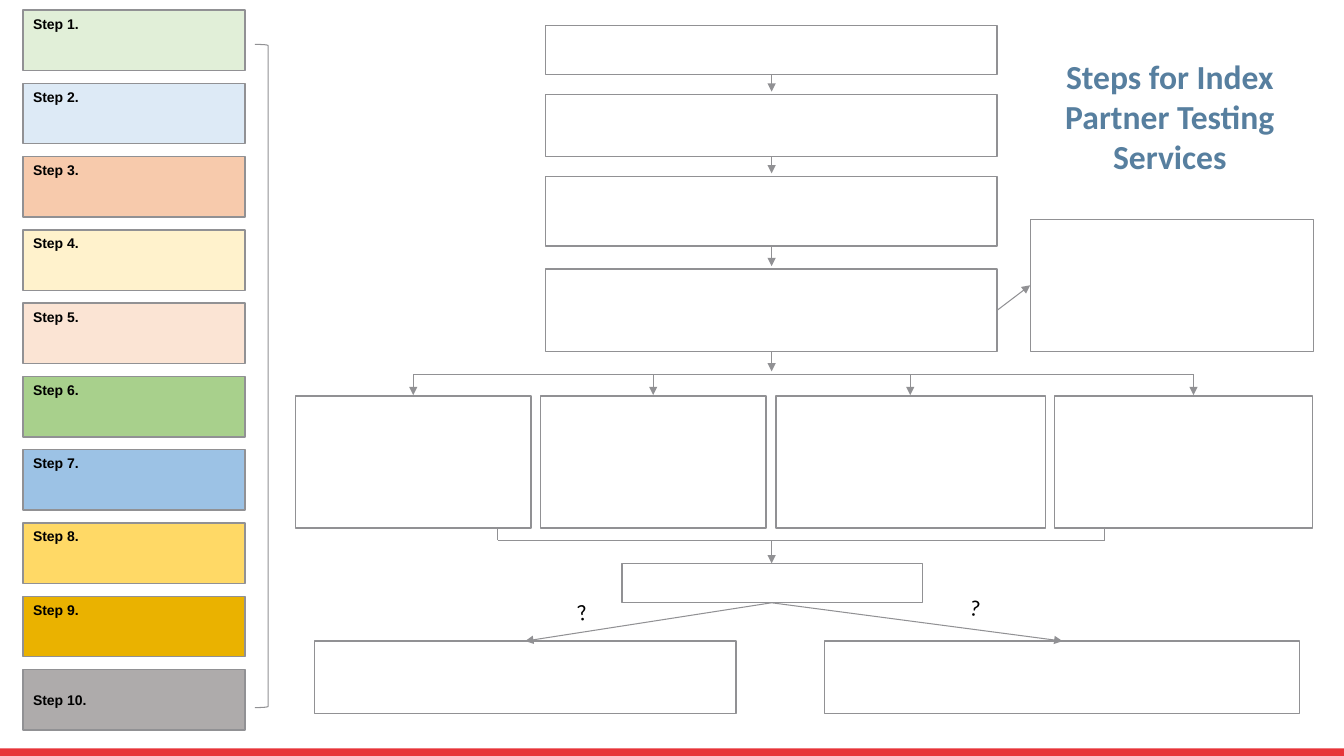
from lxml.etree import SubElement
from pptx import Presentation
from pptx.dml.color import RGBColor
from pptx.enum.shapes import MSO_CONNECTOR as Connector, MSO_SHAPE as Shape
from pptx.enum.text import MSO_ANCHOR as Anchor, PP_ALIGN as Align
from pptx.oxml.ns import qn
from pptx.util import Inches, Pt

CELL = Inches(0.1)
COLUMNS, ROWS = 133.33, 75

COLORS = {
    "outline": "919194",
    "text": "000000",
    "title": "577F9F",
    "paper": "FFFFFF",
    "footer": "E73439",
}
STEP_COLORS = [
    "E1EFD8", "DDEAF6", "F7CAAC", "FFF2CC", "FBE4D4",
    "A8D08C", "9CC2E5", "FFD966", "EAB200", "AEABAB",
]
STEP_FORMAT = {"name": "Arial", "size": Pt(10), "bold": True}
TITLE_FORMAT = {"name": "Calibri", "size": Pt(24), "bold": True}
MARK_FORMAT = {"name": "Calibri", "size": Pt(16)}

STEP_LEFT, STEP_TOP, STEP_WIDTH, STEP_HEIGHT, STEP_PITCH = 2.3, 1, 22, 6, 7.27
MAIN_LEFT, MAIN_WIDTH, MAIN_CENTER = 54.1, 44.8, 76.55
MAIN_ROWS = [(2.5, 4.9), (9.4, 6.1), (17.5, 6.9), (26.7, 8.2)]
BRANCHES = [(29.3, 23.4, 41), (53.6, 22.4, 64.8), (77, 26.7, 90.3), (104.6, 25.6, 118.4)]
BRANCH_TOP, BRANCH_HEIGHT, BRANCH_BAR = 39.3, 13.1, 37.15
MERGE_BAR, MERGE_ENDS = 53.6, (49.4, 109.6)
DECISION_TOP, DECISION_HEIGHT = 55.9, 3.9
OUTCOME_TOP = 63.6
OUTCOMES = [(31.2, 41.8, 52.1), (81.8, 47.1, 105.4)]
MARKS = [(54.1, 58.9, 350.8), (93.1, 58.4, 8.2)]


def cells(*counts):
    return [round(count * CELL) for count in counts]


def rgb(value):
    return RGBColor.from_string(value)


def write(shape, text, style, color, align=Align.LEFT, anchor=Anchor.TOP):
    frame = shape.text_frame
    frame.word_wrap = True
    frame.vertical_anchor = anchor
    paragraph = frame.paragraphs[0]
    paragraph.alignment = align
    run = paragraph.add_run()
    run.text = text
    for attribute, value in style.items():
        setattr(run.font, attribute, value)
    run.font.color.rgb = rgb(color)


def add_box(slide, left, top, width, height, fill=None, line=1, kind=Shape.RECTANGLE):
    shape = slide.shapes.add_shape(kind, *cells(left, top, width, height))
    shape.shadow.inherit = False
    if fill:
        shape.fill.solid()
        shape.fill.fore_color.rgb = rgb(fill)
    else:
        shape.fill.background()
    if line:
        shape.line.color.rgb = rgb(COLORS["outline"])
        shape.line.width = Pt(line)
    else:
        shape.line.fill.background()
    return shape


def add_line(slide, start, end, arrow=True):
    connector = slide.shapes.add_connector(Connector.STRAIGHT, *cells(*start, *end))
    connector.line.color.rgb = rgb(COLORS["outline"])
    connector.line.width = Pt(0.75)
    if arrow:
        SubElement(connector.line._get_or_add_ln(), qn("a:tailEnd"), type="triangle")
    SubElement(connector._element.spPr, qn("a:effectLst"))


def add_steps(slide):
    last = len(STEP_COLORS) - 1
    for index, color in enumerate(STEP_COLORS):
        top = STEP_TOP + index * STEP_PITCH
        box = add_box(slide, STEP_LEFT, top, STEP_WIDTH, STEP_HEIGHT, color)
        anchor = Anchor.MIDDLE if index == last else Anchor.TOP
        write(box, f"Step {index + 1}.", STEP_FORMAT, COLORS["text"], anchor=anchor)
    bracket = add_box(slide, 25.3, 4.4, 1.3, 65.8, line=0.75, kind=Shape.RIGHT_BRACKET)
    bracket.adjustments[0] = 0.08


def add_main_flow(slide):
    next_tops = [top for top, _ in MAIN_ROWS[1:]] + [BRANCH_BAR]
    for (top, height), next_top in zip(MAIN_ROWS, next_tops):
        add_box(slide, MAIN_LEFT, top, MAIN_WIDTH, height)
        add_line(slide, (MAIN_CENTER, top + height), (MAIN_CENTER, next_top - 0.3))
    add_box(slide, 102.2, 21.8, 28.1, 13.1)
    add_line(slide, (MAIN_LEFT + MAIN_WIDTH, 30.8), (102.2, 28.3))


def add_branches(slide):
    first, last = BRANCHES[0][2], BRANCHES[-1][2]
    add_line(slide, (first, BRANCH_BAR), (last, BRANCH_BAR), arrow=False)
    for left, width, arrow_column in BRANCHES:
        add_box(slide, left, BRANCH_TOP, width, BRANCH_HEIGHT)
        add_line(slide, (arrow_column, BRANCH_BAR), (arrow_column, BRANCH_TOP - 0.1))
    start, end = MERGE_ENDS
    add_line(slide, (start, MERGE_BAR), (end, MERGE_BAR), arrow=False)
    for column in MERGE_ENDS:
        add_line(slide, (column, MERGE_BAR), (column, BRANCH_TOP + BRANCH_HEIGHT), arrow=False)


def add_decision(slide):
    add_box(slide, 61.7, DECISION_TOP, 29.8, DECISION_HEIGHT)
    add_line(slide, (MAIN_CENTER, MERGE_BAR), (MAIN_CENTER, DECISION_TOP))
    decision_bottom = DECISION_TOP + DECISION_HEIGHT
    for left, width, arrow_column in OUTCOMES:
        add_box(slide, left, OUTCOME_TOP, width, 7.2)
        add_line(slide, (MAIN_CENTER, decision_bottom), (arrow_column, OUTCOME_TOP))
    for left, top, angle in MARKS:
        mark = slide.shapes.add_textbox(*cells(left, top, 7.3, 3.7))
        mark.rotation = angle
        write(mark, "?", MARK_FORMAT, COLORS["text"], Align.CENTER)


def add_title(slide):
    title = add_box(slide, 100.8, 3.6, 30.5, 15.8, COLORS["paper"], line=None)
    write(title, "Steps for Index Partner Testing Services", TITLE_FORMAT,
          COLORS["title"], Align.CENTER, Anchor.MIDDLE)


def main():
    presentation = Presentation()
    presentation.slide_width, presentation.slide_height = cells(COLUMNS, ROWS)
    slide = presentation.slides.add_slide(presentation.slide_layouts[6])
    add_steps(slide)
    add_main_flow(slide)
    add_branches(slide)
    add_decision(slide)
    add_title(slide)
    add_box(slide, 0, ROWS - 0.75, COLUMNS, 0.75, COLORS["footer"], line=None)
    presentation.save("out.pptx")


if __name__ == "__main__":
    main()
